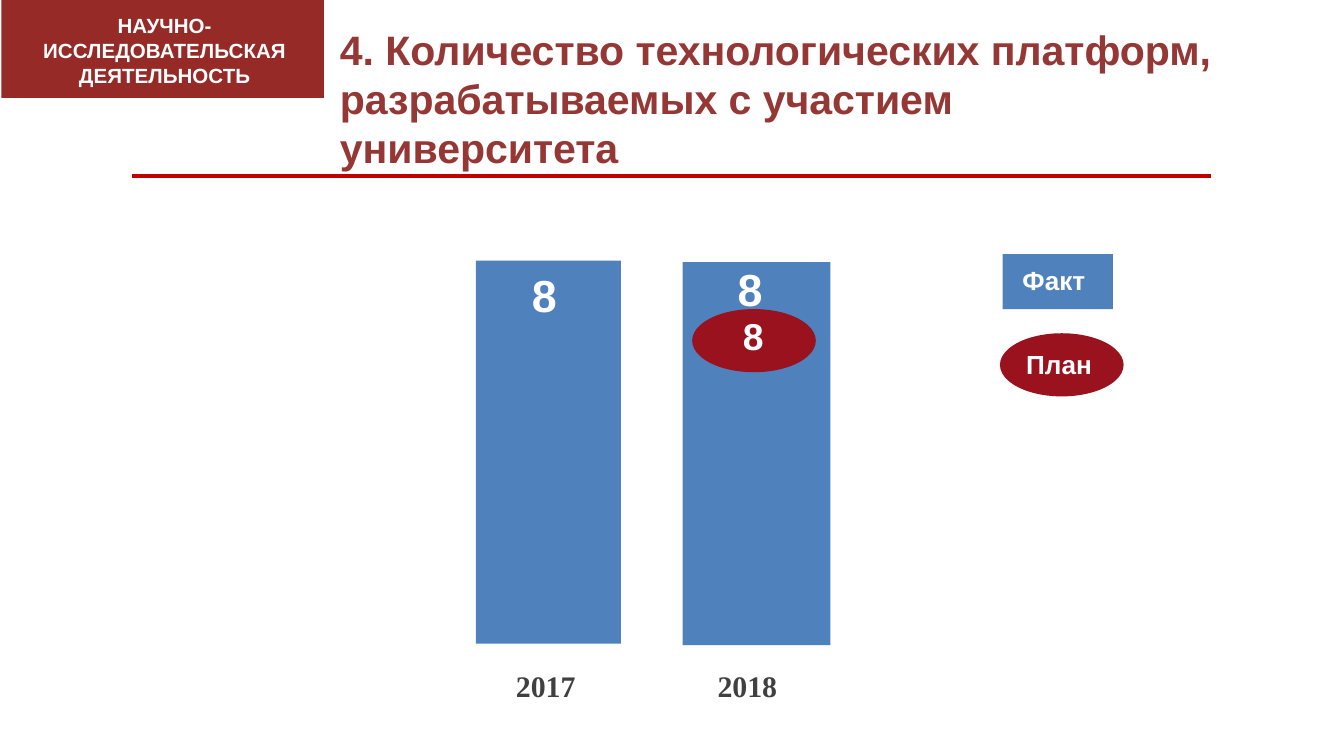
from pptx import Presentation
from pptx.dml.color import RGBColor
from pptx.enum.shapes import MSO_CONNECTOR as LINK, MSO_SHAPE as SHAPE
from pptx.enum.text import PP_ALIGN as ALIGN
from pptx.oxml.ns import qn
from pptx.util import Inches, Pt
from lxml.etree import SubElement

WHITE = RGBColor(0xFF, 0xFF, 0xFF)
BLUE = RGBColor(0x4F, 0x81, 0xBD)
RED = RGBColor(0x99, 0x12, 0x1E)
BRICK = RGBColor(0x95, 0x2A, 0x27)
WINE = RGBColor(0x95, 0x37, 0x35)
RULE = RGBColor(0xC0, 0x00, 0x00)
GREY = RGBColor(0x40, 0x40, 0x40)

deck = Presentation()
deck.slide_width = Inches(10)
deck.slide_height = Inches(10) * 9 // 16
slide = deck.slides.add_slide(deck.slide_layouts[6])
shapes = slide.shapes


def add_form(kind, left, top, width, height, fill):
    form = shapes.add_shape(kind, Inches(left), Inches(top), Inches(width), Inches(height))
    form.shadow.inherit = False
    form.fill.solid()
    form.fill.fore_color.rgb = fill
    form.line.fill.background()


def add_text(text, left, top, width, height, size, color=WHITE, face="Arial", align=ALIGN.LEFT, tab=None):
    box = shapes.add_textbox(Inches(left), Inches(top), Inches(width), Inches(height))
    frame = box.text_frame
    frame.word_wrap = True
    frame.text = text
    para = frame.paragraphs[0]
    para.alignment = align
    if tab:
        stops = SubElement(para._p.get_or_add_pPr(), qn("a:tabLst"))
        SubElement(stops, qn("a:tab"), pos=str(Inches(tab)), algn="l")
    for run in para.runs:
        run.font.name = face
        run.font.size = Pt(size)
        run.font.bold = True
        run.font.color.rgb = color
    return frame


rule = shapes.add_connector(LINK.STRAIGHT, Inches(9.01), Inches(1.31), Inches(0.98), Inches(1.31))
rule.line.color.rgb = RULE
rule.line.width = Pt(2)
SubElement(rule._element.spPr, qn("a:effectLst"))

title = add_text("4. Количество технологических платформ, разрабатываемых с участием университета",
                 2.53, 0.18, 6.6, 0.78, 22, WINE)
title.margin_left = title.margin_right = title.margin_top = title.margin_bottom = 0

add_form(SHAPE.RECTANGLE, 0.01, 0, 2.4, 0.73, BRICK)
add_text("НАУЧНО-ИССЛЕДОВАТЕЛЬСКАЯ ДЕЯТЕЛЬНОСТЬ", 0.05, 0.05, 2.35, 0.66, 11, align=ALIGN.CENTER)

for left, top, width in [(3.54, 1.94, 1.08), (5.08, 1.95, 1.1)]:
    add_form(SHAPE.RECTANGLE, left, top, width, 2.85, BLUE)
for left, top, width in [(3.86, 1.94, 0.63), (5.39, 1.9, 0.57)]:
    add_text("8", left, top, width, 0.5, 24)
add_text("2017\t2018", 3.74, 4.92, 2.49, 0.37, 16, GREY, "Times New Roman", tab=1.5)

add_form(SHAPE.OVAL, 5.15, 2.3, 0.92, 0.47, RED)
add_text("8", 5.43, 2.28, 0.53, 0.44, 20)

add_form(SHAPE.RECTANGLE, 7.46, 1.89, 0.82, 0.41, BLUE)
add_text("Факт", 7.51, 1.92, 0.73, 0.34, 14)
add_form(SHAPE.OVAL, 7.44, 2.48, 0.92, 0.47, RED)
add_text("План", 7.39, 2.54, 0.98, 0.34, 14, align=ALIGN.CENTER)

deck.save("out.pptx")
